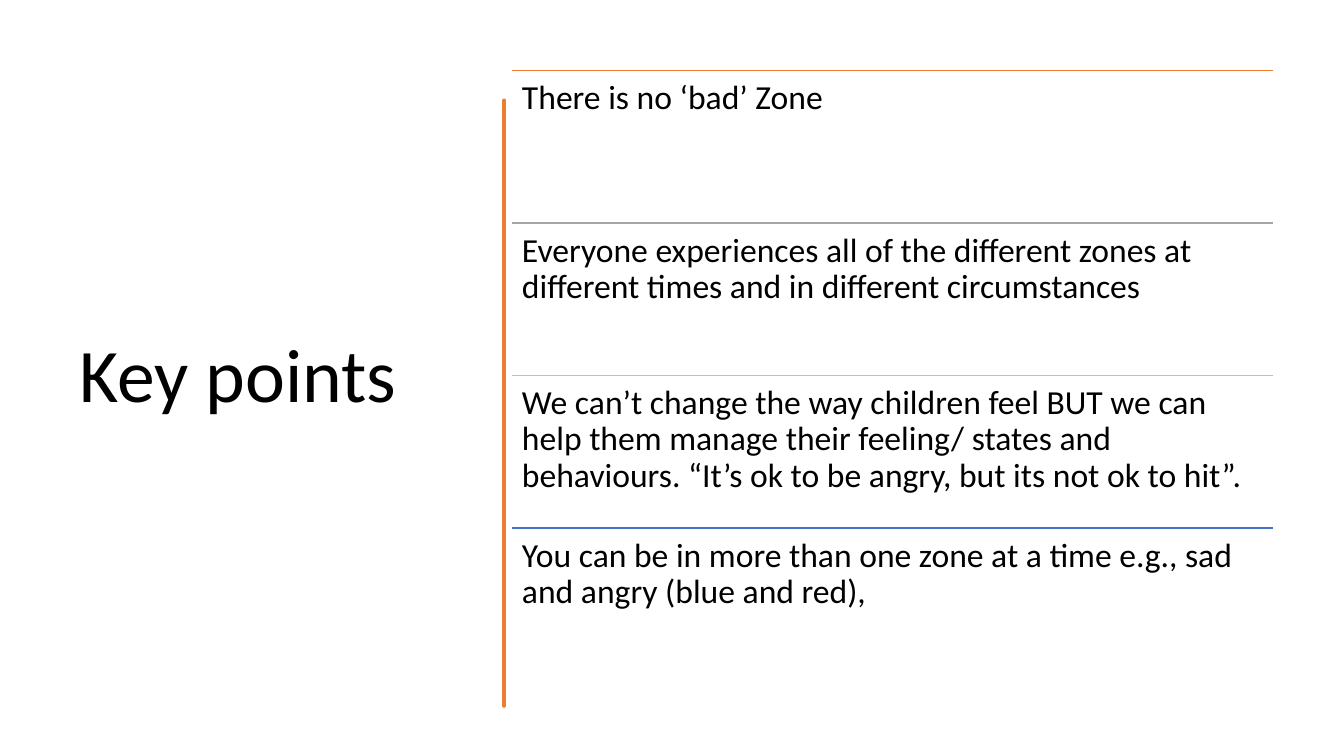
from dataclasses import dataclass

from lxml.etree import SubElement
from pptx import Presentation
from pptx.dml.color import RGBColor
from pptx.enum.text import MSO_ANCHOR
from pptx.oxml.ns import qn
from pptx.util import Inches, Length, Pt

SLIDE_WIDTH, SLIDE_HEIGHT = Inches(13.33), Inches(7.5)
FONT = "Calibri"
ORANGE = "ED7D31"

# Key point list, in percent of the slide
LIST_LEFT, LIST_WIDTH = 38.1, 56.65
LIST_TOP, ROW_HEIGHT = 9.33, 20.17

# Brush stroke, in inches
BRUSH_LEFT, BRUSH_RIGHT, BRUSH_TOP = 4.73, 4.75, 0.84
CURVE_STEPS = 6


@dataclass
class KeyPoint:
    text: str
    color: str


@dataclass
class Wave:
    """One cubic curve along an edge: two control points and the end height."""
    x1: float
    y1: float
    x2: float
    y2: float
    end: float


KEY_POINTS = [
    KeyPoint("There is no ‘bad’ Zone", ORANGE),
    KeyPoint("Everyone experiences all of the different zones at different times "
             "and in different circumstances", "A5A5A5"),
    KeyPoint("We can’t change the way children feel BUT we can help them manage their "
             "feeling/ states and behaviours. “It’s ok to be angry, but its not ok to hit”.",
             "FFC000"),
    KeyPoint("You can be in more than one zone at a time e.g., sad and angry "
             "(blue and red),", "4472C4"),
]

RIGHT_EDGE = [
    Wave(4.77, 1.02, 4.77, 1.19, 1.46), Wave(4.73, 1.73, 4.76, 1.95, 2.26),
    Wave(4.74, 2.57, 4.75, 2.62, 2.94), Wave(4.74, 3.25, 4.77, 3.42, 3.56),
    Wave(4.73, 3.7, 4.79, 4.14, 4.36), Wave(4.71, 4.57, 4.72, 4.84, 5.1),
    Wave(4.77, 5.36, 4.77, 5.64, 5.84), Wave(4.73, 6.03, 4.76, 6.5, 6.76),
]
LEFT_EDGE = [
    Wave(4.74, 6.46, 4.71, 6.44, 6.13), Wave(4.74, 5.83, 4.74, 5.7, 5.57),
    Wave(4.72, 5.44, 4.72, 4.95, 4.77), Wave(4.73, 4.59, 4.71, 4.45, 4.15),
    Wave(4.74, 3.86, 4.72, 3.73, 3.35), Wave(4.74, 2.98, 4.72, 2.81, 2.5),
    Wave(4.74, 2.18, 4.75, 2, 1.81), Wave(4.7, 1.63, 4.77, 1.04, 0.84),
]


def across(percent: float) -> Length:
    return Length(round(SLIDE_WIDTH * percent / 100))


def down(percent: float) -> Length:
    return Length(round(SLIDE_HEIGHT * percent / 100))


def rgb(color: str) -> RGBColor:
    return RGBColor.from_string(color)


def add_text(slide, text: str, *, left: float, top: float, width: float, height: float,
             size: float, inset: float, anchor=MSO_ANCHOR.TOP, color: str = "000000"):
    shape = slide.shapes.add_textbox(across(left), down(top), across(width), down(height))
    frame = shape.text_frame
    frame.word_wrap = True
    frame.vertical_anchor = anchor
    frame.margin_left = frame.margin_right = Inches(0.1)
    frame.margin_top = frame.margin_bottom = Inches(inset)
    paragraph = frame.paragraphs[0]
    paragraph.text = text
    paragraph.line_spacing = 0.9
    paragraph.font.name = FONT
    paragraph.font.size = Pt(size)
    paragraph.font.color.rgb = rgb(color)
    return shape


def add_rule(slide, top: float, color: str) -> None:
    line = slide.shapes.add_connector(1, across(LIST_LEFT), down(top),
                                      across(LIST_LEFT + LIST_WIDTH), down(top))
    line.line.color.rgb = rgb(color)
    line.line.width = Pt(1)
    SubElement(line._element.spPr, qn("a:effectLst"))


def edge_points(x: float, start: float, waves: list[Wave]) -> list[tuple[float, float]]:
    points = [(x, start)]
    for wave in waves:
        for step in range(1, CURVE_STEPS + 1):
            t = step / CURVE_STEPS
            u = 1 - t
            a, b, c, d = u ** 3, 3 * u * u * t, 3 * u * t * t, t ** 3
            points.append((a * x + b * wave.x1 + c * wave.x2 + d * x,
                           a * start + b * wave.y1 + c * wave.y2 + d * wave.end))
        start = wave.end
    return points


def add_brush_stroke(slide) -> None:
    points = edge_points(BRUSH_RIGHT, BRUSH_TOP, RIGHT_EDGE)
    points += edge_points(BRUSH_LEFT, RIGHT_EDGE[-1].end, LEFT_EDGE)
    builder = slide.shapes.build_freeform(*points[0], scale=Inches(1))
    builder.add_line_segments(points[1:], close=True)
    shape = builder.convert_to_shape()
    shape.shadow.inherit = False
    shape.fill.solid()
    shape.fill.fore_color.rgb = rgb(ORANGE)
    shape.line.color.rgb = rgb(ORANGE)
    shape.line.width = Pt(3.25)
    SubElement(shape._element.spPr.find(qn("a:ln")), qn("a:round"))


def main() -> None:
    presentation = Presentation()
    presentation.slide_width, presentation.slide_height = SLIDE_WIDTH, SLIDE_HEIGHT
    slide = presentation.slides.add_slide(presentation.slide_layouts[6])

    # Title and divider
    add_text(slide, "Key points", left=5.18, top=LIST_TOP, width=28.06, height=81.47,
             size=54, inset=0.05, anchor=MSO_ANCHOR.MIDDLE)
    add_brush_stroke(slide)

    # Ruled list of key points
    for row, point in enumerate(KEY_POINTS):
        top = LIST_TOP + row * ROW_HEIGHT
        add_rule(slide, top, point.color)
        add_text(slide, point.text, left=LIST_LEFT, top=top, width=LIST_WIDTH,
                 height=ROW_HEIGHT, size=24, inset=0.1)

    presentation.save("out.pptx")


if __name__ == "__main__":
    main()
